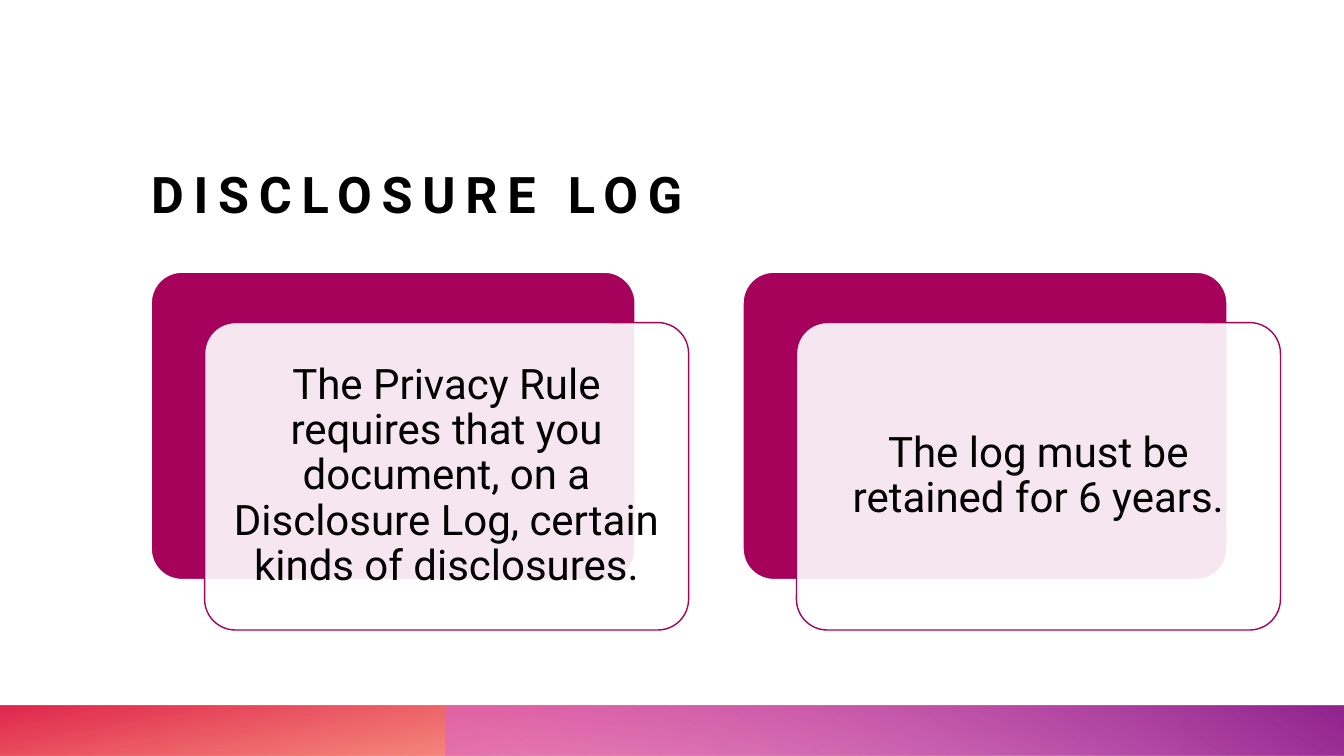
import pptx
import pptx.dml.color
import pptx.enum.shapes
import pptx.enum.text
import pptx.oxml.ns
import pptx.util
from lxml import etree

Inches = pptx.util.Inches
RGBColor = pptx.dml.color.RGBColor
PRESET = pptx.enum.shapes.MSO_SHAPE
ALIGN = pptx.enum.text.PP_ALIGN
ANCHOR = pptx.enum.text.MSO_ANCHOR

BLACK = RGBColor(0x00, 0x00, 0x00)
WHITE = RGBColor(0xFF, 0xFF, 0xFF)
BERRY = RGBColor(0xA6, 0x02, 0x5C)
ORANGE = RGBColor(0xFE, 0x4A, 0x00)
RED = RGBColor(0xDA, 0x00, 0x2F)
PINK = RGBColor(0xD8, 0x61, 0xD4)
PURPLE = RGBColor(0x92, 0x24, 0x8E)

CARD_TEXTS = [
    "The Privacy Rule requires that you document, on a Disclosure Log, "
    "certain kinds of disclosures.",
    "The log must be retained for 6 years.",
]
CARD_LEFT, CARD_TOP, CARD_PITCH = 1.5, 2.7, 5.87
CARD_WIDTH, CARD_HEIGHT = 4.8, 3.05
FRONT_SHIFT_X, FRONT_SHIFT_Y = 0.53, 0.5


def set_alpha(colour_element, percent):
    alpha = etree.SubElement(colour_element, pptx.oxml.ns.qn("a:alpha"))
    alpha.set("val", str(percent * 1000))


class SlideBuilder:
    font = "Roboto"

    def __init__(self, slide):
        self.slide = slide

    def shape(self, preset, left, top, width, height):
        shape = self.slide.shapes.add_shape(
            preset, Inches(left), Inches(top), Inches(width), Inches(height))
        shape.shadow.inherit = False
        return shape

    def gradient_band(self, left, width, stops, angle, rotation=0):
        """Mirrored footer band; stops are (position %, colour, opacity %), angle is clockwise."""
        band = self.shape(PRESET.RECTANGLE, left, 7, width, 0.5)
        band.rotation = rotation
        band._element.spPr.xfrm.set("flipH", "1")
        band.line.fill.background()
        band.fill.gradient()
        band.fill.gradient_angle = 360 - angle
        for stop, (position, colour, _) in zip(band.fill.gradient_stops, stops):
            stop.position = position / 100
            stop.color.rgb = colour
        colours = band._element.spPr.iter(pptx.oxml.ns.qn("a:srgbClr"))
        for colour_element, (_, _, opacity) in zip(list(colours), stops):
            set_alpha(colour_element, opacity)

    def rounded_panel(self, left, top, fill, outline):
        panel = self.shape(PRESET.ROUNDED_RECTANGLE, left, top, CARD_WIDTH, CARD_HEIGHT)
        panel.adjustments[0] = 0.1
        panel.fill.solid()
        panel.fill.fore_color.rgb = fill
        panel.line.color.rgb = outline
        panel.line.width = pptx.util.Pt(1)
        return panel

    def fill_text(self, frame, text, size, inset, anchor, align):
        frame.word_wrap = True
        frame.vertical_anchor = anchor
        frame.margin_left = frame.margin_right = Inches(inset)
        frame.margin_top = frame.margin_bottom = Inches(inset)
        paragraph = frame.paragraphs[0]
        paragraph.alignment = align
        run = paragraph.add_run()
        run.text = text
        run.font.name = self.font
        run.font.size = pptx.util.Pt(size)
        run.font.color.rgb = BLACK
        return paragraph, run

    def title(self, text):
        box = self.slide.shapes.add_textbox(
            Inches(1.5), Inches(0.87), Inches(11.2), Inches(1.35))
        _, run = self.fill_text(box.text_frame, text, 36, 0, ANCHOR.BOTTOM, ALIGN.LEFT)
        run.font.bold = True
        run.font._element.set("spc", "700")

    def card(self, left, text):
        """Solid panel with a translucent text panel shifted in front of it."""
        self.rounded_panel(left, CARD_TOP, BERRY, WHITE)
        front = self.rounded_panel(
            left + FRONT_SHIFT_X, CARD_TOP + FRONT_SHIFT_Y, WHITE, BERRY)
        set_alpha(front._element.spPr.find(".//" + pptx.oxml.ns.qn("a:srgbClr")), 90)
        paragraph, _ = self.fill_text(
            front.text_frame, text, 30, 0.12, ANCHOR.MIDDLE, ALIGN.CENTER)
        paragraph.line_spacing = 0.9


def main():
    deck = pptx.Presentation()
    deck.slide_width = Inches(13.33)
    deck.slide_height = Inches(7.5)
    builder = SlideBuilder(deck.slides.add_slide(deck.slide_layouts[6]))

    builder.gradient_band(0, 13.33, [(14, ORANGE, 28), (100, RED, 85)], 100, rotation=180)
    builder.gradient_band(4.42, 8.92, [(9, PINK, 55), (99, PURPLE, 100)], 240)
    builder.title("DISCLOSURE LOG")
    for column, text in enumerate(CARD_TEXTS):
        builder.card(CARD_LEFT + column * CARD_PITCH, text)

    deck.save("out.pptx")


if __name__ == "__main__":
    main()
